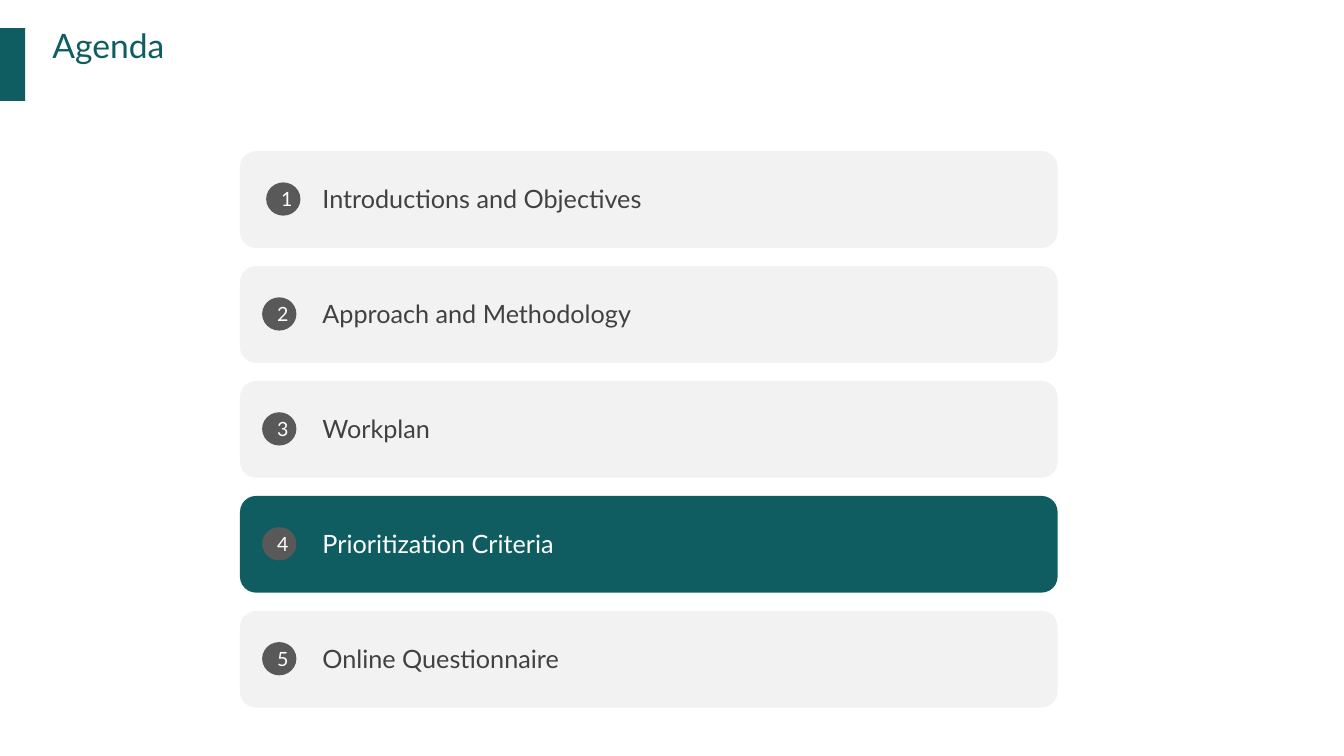
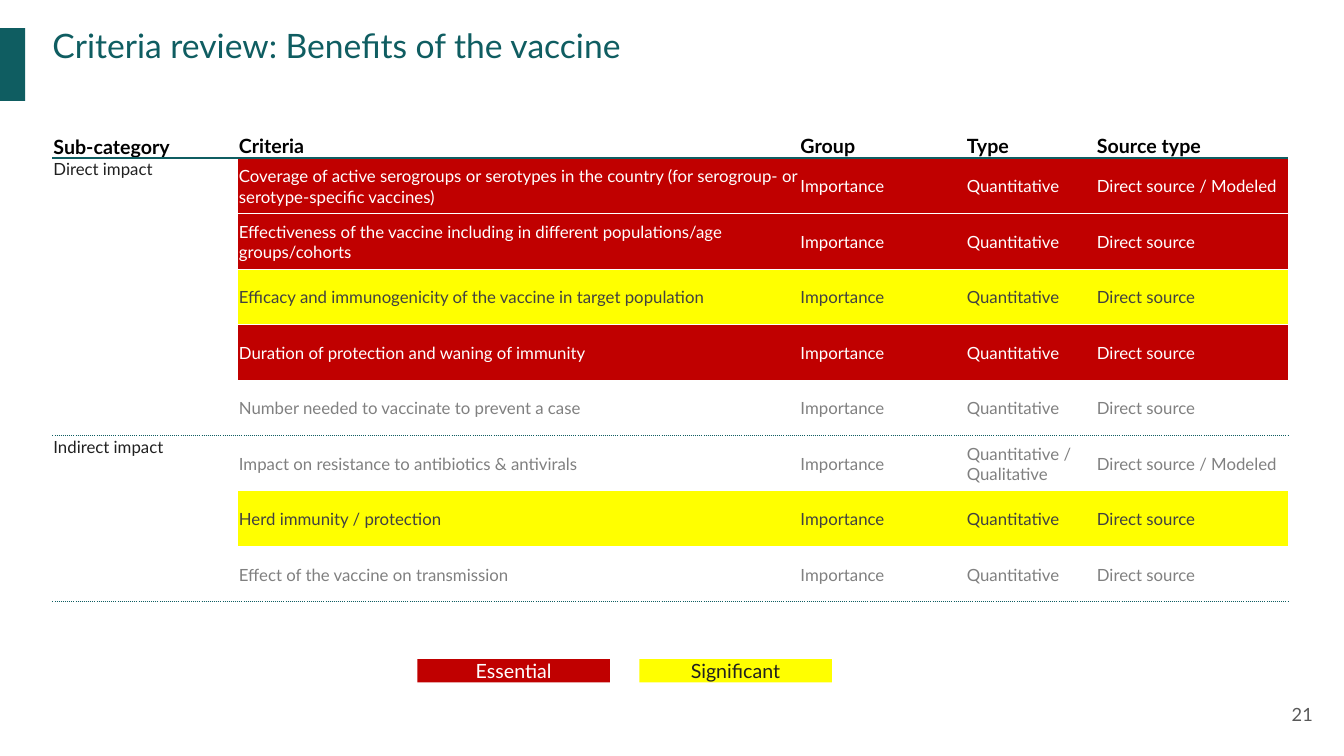
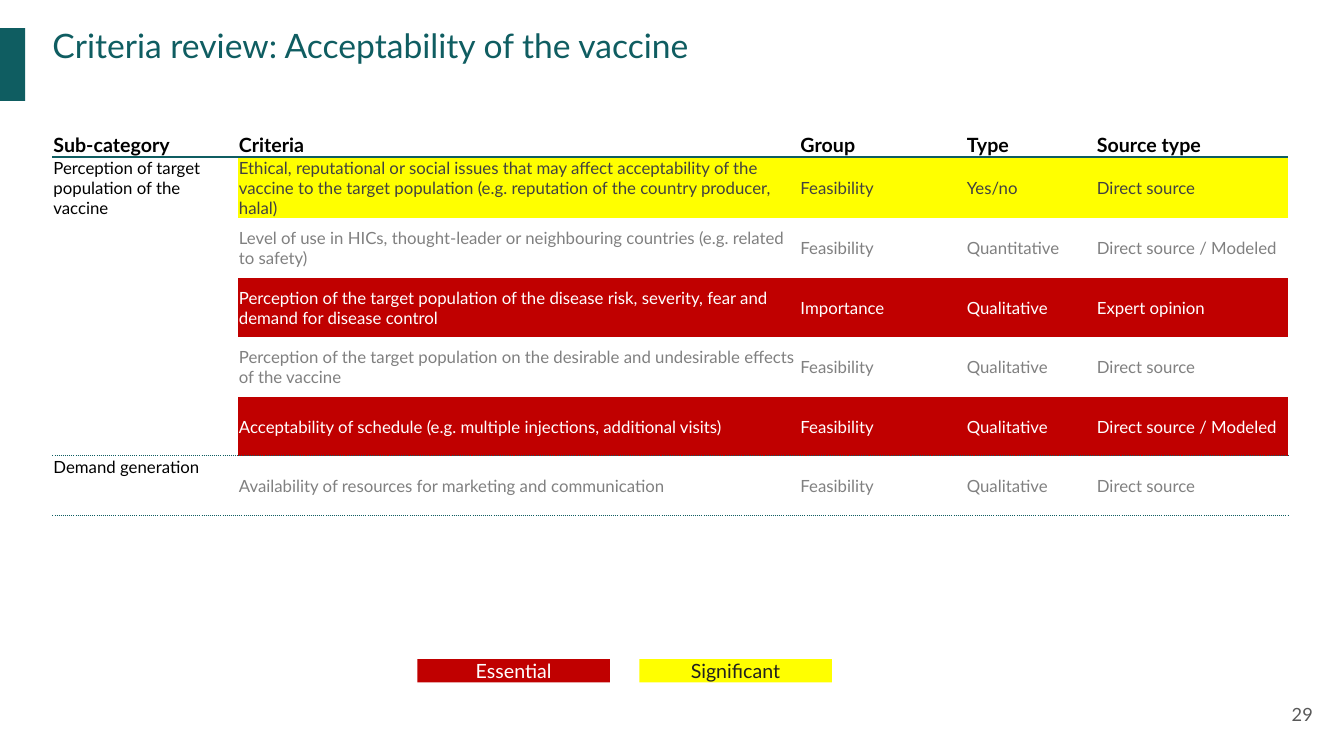
from lxml import etree
from pptx import Presentation
from pptx.dml.color import RGBColor
from pptx.enum.shapes import MSO_SHAPE
from pptx.enum.text import MSO_ANCHOR, PP_ALIGN
from pptx.oxml import parse_xml
from pptx.oxml.ns import nsdecls, qn
from pptx.util import Inches, Pt

FONT = "Lato"
TEAL = RGBColor(0x0F, 0x5D, 0x61)
WHITE = RGBColor(0xFF, 0xFF, 0xFF)
BLACK = RGBColor(0x00, 0x00, 0x00)
INK = RGBColor(0x20, 0x20, 0x20)
TEXT = RGBColor(0x41, 0x41, 0x41)
GREY = RGBColor(0x59, 0x59, 0x59)
MUTED = RGBColor(0x80, 0x80, 0x80)
PANEL = RGBColor(0xF2, 0xF2, 0xF2)
RED = RGBColor(0xC0, 0x00, 0x00)
YELLOW = RGBColor(0xFF, 0xFF, 0x00)

PLAIN_STYLE = "{2D5ABB26-0587-4C30-8999-92F81FD0307C}"

# Row rating: fill and font colour
ESSENTIAL = (RED, WHITE)
SIGNIFICANT = (YELLOW, TEXT)
OTHER = (None, MUTED)

# Row edges: colour, points, dash
HEADER_EDGE = (TEAL, 1.5, "solid")
GROUP_EDGE = (TEAL, 1, "sysDot")
ROW_EDGE = (WHITE, 0.75, "solid")

AGENDA = ["Introductions and Objectives", "Approach and Methodology", "Workplan",
          "Prioritization Criteria", "Online Questionnaire"]
CURRENT = 4

HEADERS = ["Sub-category", "Criteria", "Group", "Type", "Source type"]
COL_WIDTHS = [1.84, 5.57, 1.65, 1.29, 1.91]

REVIEWS = [
    {"title": "Criteria review: Benefits of the vaccine", "page": "21",
     "header_h": 0.26, "row_h": 0.55, "label_color": INK,
     "groups": [
         ("Direct impact", [
             (ESSENTIAL, "Coverage of active serogroups or serotypes in the country "
              "(for serogroup- or serotype-specific vaccines)",
              "Importance", "Quantitative", "Direct source / Modeled"),
             (ESSENTIAL, "Effectiveness of the vaccine including in different "
              "populations/age groups/cohorts",
              "Importance", "Quantitative", "Direct source"),
             (SIGNIFICANT, "Efficacy and immunogenicity of the vaccine in target population",
              "Importance", "Quantitative", "Direct source"),
             (ESSENTIAL, "Duration of protection and waning of immunity",
              "Importance", "Quantitative", "Direct source"),
             (OTHER, "Number needed to vaccinate to prevent a case",
              "Importance", "Quantitative", "Direct source"),
         ]),
         ("Indirect impact", [
             (OTHER, "Impact on resistance to antibiotics & antivirals",
              "Importance", "Quantitative / Qualitative", "Direct source / Modeled"),
             (SIGNIFICANT, "Herd immunity / protection",
              "Importance", "Quantitative", "Direct source"),
             (OTHER, "Effect of the vaccine on transmission",
              "Importance", "Quantitative", "Direct source"),
         ]),
     ]},
    {"title": "Criteria review: Acceptability of the vaccine", "page": "29",
     "header_h": 0.18, "row_h": 0.59, "label_color": BLACK,
     "groups": [
         ("Perception of target population of the vaccine", [
             (SIGNIFICANT, "Ethical, reputational or social issues that may affect "
              "acceptability of the vaccine to the target population "
              "(e.g. reputation of the country producer, halal)",
              "Feasibility", "Yes/no", "Direct source"),
             (OTHER, "Level of use in HICs, thought-leader or neighbouring countries "
              "(e.g. related to safety)",
              "Feasibility", "Quantitative", "Direct source / Modeled"),
             (ESSENTIAL, "Perception of the target population of the disease risk, "
              "severity, fear and demand for disease control",
              "Importance", "Qualitative", "Expert opinion"),
             (OTHER, "Perception of the target population on the desirable and "
              "undesirable effects of the vaccine",
              "Feasibility", "Qualitative", "Direct source"),
             (ESSENTIAL, "Acceptability of schedule (e.g. multiple injections, "
              "additional visits)",
              "Feasibility", "Qualitative", "Direct source / Modeled"),
         ]),
         ("Demand generation", [
             (OTHER, "Availability of resources for marketing and communication",
              "Feasibility", "Qualitative", "Direct source"),
         ]),
     ]},
]


def add_box(s, at, kind=None, fill=None, text="", size=14, color=WHITE,
            align=PP_ALIGN.LEFT, anchor=MSO_ANCHOR.TOP, inset=None):
    """Add a filled shape, or a text box when no kind is given."""
    box = [Inches(v) for v in at]
    if kind is None:
        sp = s.shapes.add_textbox(*box)
    else:
        sp = s.shapes.add_shape(kind, *box)
        sp.shadow.inherit = False
        sp.fill.solid()
        sp.fill.fore_color.rgb = fill
        sp.line.fill.background()
    if text:
        tf = sp.text_frame
        tf.word_wrap = True
        tf.vertical_anchor = anchor
        if inset is not None:
            tf.margin_left = tf.margin_right = Inches(inset)
            tf.margin_top = tf.margin_bottom = Inches(inset)
        tf.text = text
        p = tf.paragraphs[0]
        p.alignment = align
        font = p.runs[0].font
        font.name, font.size, font.color.rgb = FONT, Pt(size), color


def set_edges(cell, top, bottom):
    """Draw the top and bottom borders of a table cell."""
    tc_pr = cell._tc.get_or_add_tcPr()
    for tag, (color, width, dash) in (("lnT", top), ("lnB", bottom)):
        ln = parse_xml(f'<a:{tag} {nsdecls("a")} w="{Pt(width)}"/>')
        fill = etree.SubElement(ln, qn("a:solidFill"))
        etree.SubElement(fill, qn("a:srgbClr"), val=str(color))
        etree.SubElement(ln, qn("a:prstDash"), val=dash)
        tc_pr.append(ln)


prs = Presentation()
prs.slide_width, prs.slide_height = Inches(13.33), Inches(7.5)

# Title and side band on every slide
slides = []
for title in ["Agenda"] + [review["title"] for review in REVIEWS]:
    s = prs.slides.add_slide(prs.slide_layouts[6])
    add_box(s, (0, 0.28, 0.25, 0.72), MSO_SHAPE.RECTANGLE, TEAL)
    add_box(s, (0.52, 0.25, 12.55, 0.8), text=title, size=24, color=TEAL, inset=0)
    slides.append(s)

# Agenda items
for n, item in enumerate(AGENDA, 1):
    s = slides[0]
    top = 1.5 + 1.14 * (n - 1)
    panel, color = (TEAL, WHITE) if n == CURRENT else (PANEL, TEXT)
    add_box(s, (2.38, top, 8.11, 0.96), MSO_SHAPE.ROUNDED_RECTANGLE, panel)
    add_box(s, (2.64 if n == 1 else 2.6, top + 0.31, 0.34, 0.33), MSO_SHAPE.OVAL, GREY,
            str(n), align=PP_ALIGN.CENTER, anchor=MSO_ANCHOR.MIDDLE)
    add_box(s, (3.1, top + 0.27, 6.93, 0.4), text=item, size=18, color=color)

# Criteria reviews
for s, review in zip(slides[1:], REVIEWS):
    add_box(s, (12.35, 6.8, 0.8, 0.57), text=review["page"], size=13, color=GREY,
            align=PP_ALIGN.RIGHT, anchor=MSO_ANCHOR.MIDDLE, inset=0.13)

    # Flatten the groups into rows and note where each group ends
    rows = [(OTHER, *HEADERS)]
    spans = [(0, 0)]
    for label, criteria in review["groups"]:
        spans.append((len(rows), len(rows) + len(criteria) - 1))
        for i, (rating, *values) in enumerate(criteria):
            rows.append((rating, label if i == 0 else "", *values))
    edges = [ROW_EDGE] * (len(rows) + 1)
    for first, last in spans:
        edges[last + 1] = GROUP_EDGE if first else HEADER_EDGE
    group_end = dict(spans)

    heights = [review["header_h"]] + [review["row_h"]] * (len(rows) - 1)
    frame = s.shapes.add_table(len(rows), len(HEADERS), Inches(0.52), Inches(1.31),
                               Inches(sum(COL_WIDTHS)), Inches(sum(heights)))
    table = frame.table
    table.first_row = table.horz_banding = False
    table._tbl.tblPr.find(qn("a:tableStyleId")).text = PLAIN_STYLE
    for column, width in zip(table.columns, COL_WIDTHS):
        column.width = Inches(width)
    for row, height in zip(table.rows, heights):
        row.height = Inches(height)

    for r, ((fill, color), *values) in enumerate(rows):
        for c, value in enumerate(values):
            cell = table.cell(r, c)
            cell.margin_left = cell.margin_right = cell.margin_top = Inches(0.01)
            cell.margin_bottom = 0
            last = group_end.get(r, r) if c == 0 else r
            set_edges(cell, edges[r], edges[last + 1])
            if fill and c:
                cell.fill.solid()
                cell.fill.fore_color.rgb = fill
            else:
                cell.fill.background()
            if c:
                cell.vertical_anchor = MSO_ANCHOR.MIDDLE
            else:
                cell.vertical_anchor = MSO_ANCHOR.TOP if r else MSO_ANCHOR.BOTTOM
            cell.text = value
            font = cell.text_frame.paragraphs[0].font
            if value:
                font = cell.text_frame.paragraphs[0].runs[0].font
            font.name, font.size, font.bold = FONT, Pt(12 if r else 14), r == 0
            if r == 0:
                font.color.rgb = BLACK
            else:
                font.color.rgb = color if c else review["label_color"]

    for first, last in spans:
        if last > first:
            table.cell(first, 0).merge(table.cell(last, 0))

    # Legend
    for i, (name, fill, color) in enumerate([("Essential", RED, WHITE),
                                             ("Significant", YELLOW, INK)]):
        add_box(s, (4.14 + 2.2 * i, 6.54, 1.91, 0.23), MSO_SHAPE.RECTANGLE, fill, name,
                color=color, align=PP_ALIGN.CENTER, anchor=MSO_ANCHOR.MIDDLE)

prs.save("out.pptx")
